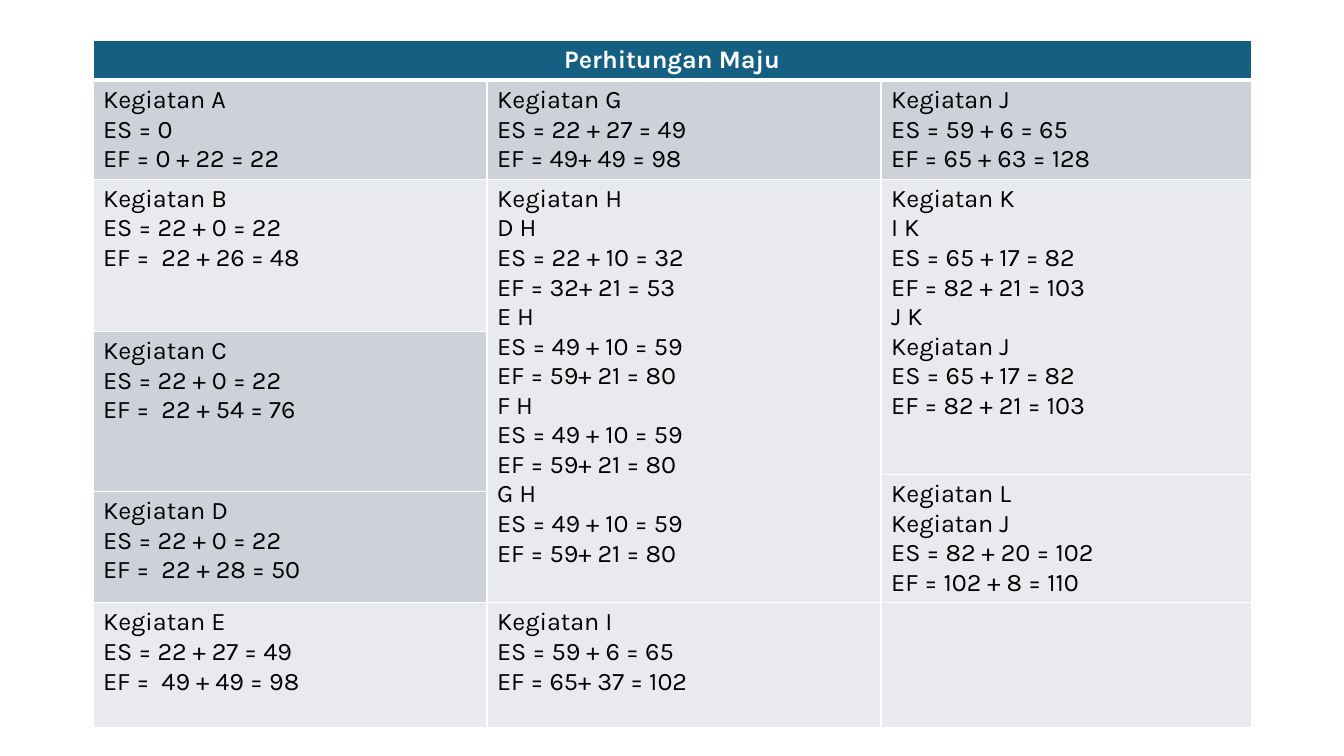
"""Builds a slide with the forward-pass table of a network schedule."""
from lxml import etree
from pptx import Presentation
from pptx.dml.color import RGBColor
from pptx.enum.text import PP_ALIGN
from pptx.oxml.ns import qn
from pptx.util import Pt

LEFT, CENTER = PP_ALIGN.LEFT, PP_ALIGN.CENTER
WHITE, BLACK = "FFFFFF", "000000"
TEAL, GREY, PALE = "156082", "CCD2D8", "E8EAED"

COLS = [281.5, 281.5, 264.5]
ROWS = [27.4, 68.4, 108.7, 102.2, 12.2, 51.1, 89.3]

H_LINES = ["Kegiatan H", "D H", "ES = 22 + 10 = 32", "EF = 32+ 21 = 53"]
for source in "EFG":
    H_LINES += [f"{source} H", "ES = 49 + 10 = 59", "EF = 59+ 21 = 80"]
K_LINES = ["ES = 65 + 17 = 82", "EF = 82 + 21 = 103"]

# row, column, row span, fill, lines
ACTIVITIES = [
    (1, 0, 1, GREY, ["Kegiatan A", "ES = 0", "EF = 0 + 22 = 22"]),
    (2, 0, 1, PALE, ["Kegiatan B", "ES = 22 + 0 = 22", "EF =  22 + 26 = 48"]),
    (3, 0, 2, GREY, ["Kegiatan C", "ES = 22 + 0 = 22", "EF =  22 + 54 = 76"]),
    (5, 0, 1, GREY, ["Kegiatan D", "ES = 22 + 0 = 22", "EF =  22 + 28 = 50"]),
    (6, 0, 1, PALE, ["Kegiatan E", "ES = 22 + 27 = 49", "EF =  49 + 49 = 98"]),
    (1, 1, 1, GREY, ["Kegiatan G", "ES = 22 + 27 = 49", "EF = 49+ 49 = 98"]),
    (2, 1, 4, PALE, H_LINES),
    (6, 1, 1, PALE, ["Kegiatan I", "ES = 59 + 6 = 65", "EF = 65+ 37 = 102"]),
    (1, 2, 1, GREY, ["Kegiatan J", "ES = 59 + 6 = 65", "EF = 65 + 63 = 128"]),
    (2, 2, 2, PALE, ["Kegiatan K", "I K", *K_LINES, "J K", "Kegiatan J", *K_LINES]),
    (4, 2, 2, PALE, ["Kegiatan L", "Kegiatan J", "ES = 82 + 20 = 102", "EF = 102 + 8 = 110"]),
    (6, 2, 1, PALE, []),
]


def rgb(value):
    """Turn a hex string into a colour."""
    return RGBColor.from_string(value)


class Deck:
    """Holds the text style and the current slide."""

    def __init__(self, slide, font, size):
        """Store the slide and its text style."""
        self.slide, self.font, self.size = slide, font, size

    def table(self, left, top, cols, rows):
        """Add an empty table with the given column widths and row heights."""
        frame = self.slide.shapes.add_table(
            len(rows), len(cols), Pt(left), Pt(top), Pt(sum(cols)), Pt(sum(rows)))
        table = frame.table
        for column, width in zip(table.columns, cols):
            column.width = Pt(width)
        for row, height in zip(table.rows, rows):
            row.height = Pt(height)
        return table

    def borders(self, cell, top=1, bottom=1):
        """Give a cell white borders."""
        tc_pr = cell._tc.get_or_add_tcPr()
        sides = [("a:lnL", 1), ("a:lnR", 1), ("a:lnT", top), ("a:lnB", bottom)]
        for i, (tag, width) in enumerate(sides):
            ln = etree.Element(qn(tag), w=str(Pt(width)))
            fill = etree.SubElement(ln, qn("a:solidFill"))
            etree.SubElement(fill, qn("a:srgbClr"), val=WHITE)
            tc_pr.insert(i, ln)

    def block(self, table, row, col, span, fill, lines, color=BLACK, bold=False, align=LEFT):
        """Fill a block of cells and write its lines; span is rows, columns."""
        height, width = span
        cell = table.cell(row, col)
        if height * width > 1:
            cell.merge(table.cell(row + height - 1, col + width - 1))
        for r in range(row, row + height):
            for c in range(col, col + width):
                part = table.cell(r, c)
                part.fill.solid()
                part.fill.fore_color.rgb = rgb(fill)
                self.borders(part, 3 if r == 1 else 1, 3 if r == 0 else 1)
        tf = cell.text_frame
        tf.text = "\n".join(lines)
        for p in tf.paragraphs:
            p.alignment = align
            for run in p.runs:
                run.font.name = self.font
                run.font.size = Pt(self.size)
                run.font.bold = bold
                run.font.color.rgb = rgb(color)


def main():
    """Build and save the slide."""
    prs = Presentation()
    prs.slide_width, prs.slide_height = Pt(960), Pt(540)
    deck = Deck(prs.slides.add_slide(prs.slide_layouts[6]), "Karla", 18)
    table = deck.table(66.4, 29, COLS, ROWS)
    deck.block(table, 0, 0, (1, 3), TEAL, ["Perhitungan Maju"], WHITE, True, CENTER)
    for row, col, height, fill, lines in ACTIVITIES:
        deck.block(table, row, col, (height, 1), fill, lines)
    prs.save("out.pptx")


if __name__ == "__main__":
    main()
